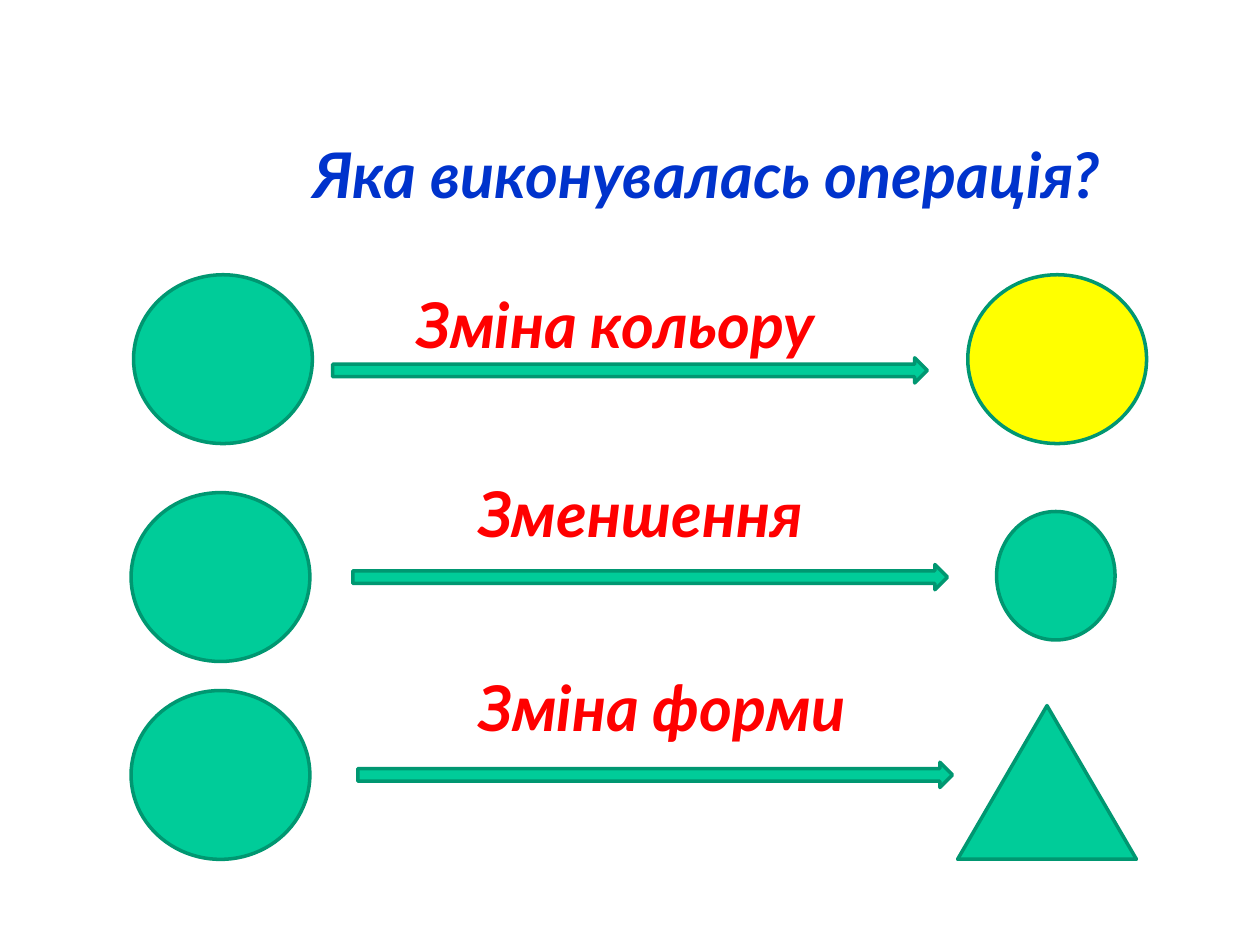
from dataclasses import dataclass

from pptx import Presentation
from pptx import util as u
from pptx.dml.color import RGBColor
from pptx.enum import shapes, text

GREEN, DARK_GREEN, YELLOW = "00CC99", "009771", "FFFF00"
BLUE, RED = "0033CC", "FF0000"
FONT_FORMAT = {"name": "Lato", "size": u.Pt(36), "bold": True, "italic": True}
CIRCLE_SIZE = (102.2, 96.5)
ARROW_SIZE = (339.8, 14.4)
LABEL_SIZE = (323.3, 55.4)

Kind = shapes.MSO_SHAPE
Pair = tuple[float, float]


@dataclass
class Figure:
    kind: Kind
    position: Pair
    size: Pair = CIRCLE_SIZE
    fill: str = GREEN


@dataclass
class Operation:
    label: str
    label_position: Pair
    circle_position: Pair
    arrow_position: Pair
    result: Figure


OPERATIONS = [
    Operation("Зміна кольору", (190.1, 157), (76.3, 157), (190.1, 204.5),
              Figure(Kind.OVAL, (553, 157), fill=YELLOW)),
    Operation("Зменшення", (204.5, 265), (74.9, 281.5), (201.6, 322.6),
              Figure(Kind.OVAL, (569.5, 292.3), (67.7, 73.4))),
    Operation("Зміна форми", (216.7, 375.8), (74.9, 394.6), (204.5, 435.6),
              Figure(Kind.ISOSCELES_TRIANGLE, (547.2, 403.2), (102.2, 87.8))),
]


def set_color(color_format, value: str) -> None:
    color_format.rgb = RGBColor.from_string(value)


def draw_figure(slide, figure: Figure) -> None:
    shape = slide.shapes.add_shape(
        figure.kind, *map(u.Pt, figure.position + figure.size))
    shape.shadow.inherit = False
    shape.fill.solid()
    set_color(shape.fill.fore_color, figure.fill)
    set_color(shape.line.color, DARK_GREEN)
    shape.line.width = u.Pt(2)


def draw_text(slide, words: str, position: Pair, size: Pair, color: str) -> None:
    frame = slide.shapes.add_textbox(*map(u.Pt, position + size)).text_frame
    frame.word_wrap = True
    frame.vertical_anchor = text.MSO_ANCHOR.MIDDLE
    paragraph = frame.paragraphs[0]
    paragraph.alignment = text.PP_ALIGN.CENTER
    run = paragraph.add_run()
    run.text = words
    for name, value in FONT_FORMAT.items():
        setattr(run.font, name, value)
    set_color(run.font.color, color)


def draw_operation(slide, operation: Operation) -> None:
    draw_figure(slide, Figure(Kind.OVAL, operation.circle_position))
    draw_figure(slide, Figure(Kind.RIGHT_ARROW, operation.arrow_position, ARROW_SIZE))
    draw_figure(slide, operation.result)
    draw_text(slide, operation.label, operation.label_position, LABEL_SIZE, RED)


def main() -> None:
    presentation = Presentation()
    presentation.slide_width, presentation.slide_height = u.Pt(720), u.Pt(540)
    slide = presentation.slides.add_slide(presentation.slide_layouts[6])

    # Title
    draw_text(slide, "Яка виконувалась операція?", (87.8, 54), (632.2, 90), BLUE)

    # One row per operation: start circle, labelled arrow, result
    for operation in OPERATIONS:
        draw_operation(slide, operation)

    presentation.save("out.pptx")


if __name__ == "__main__":
    main()
